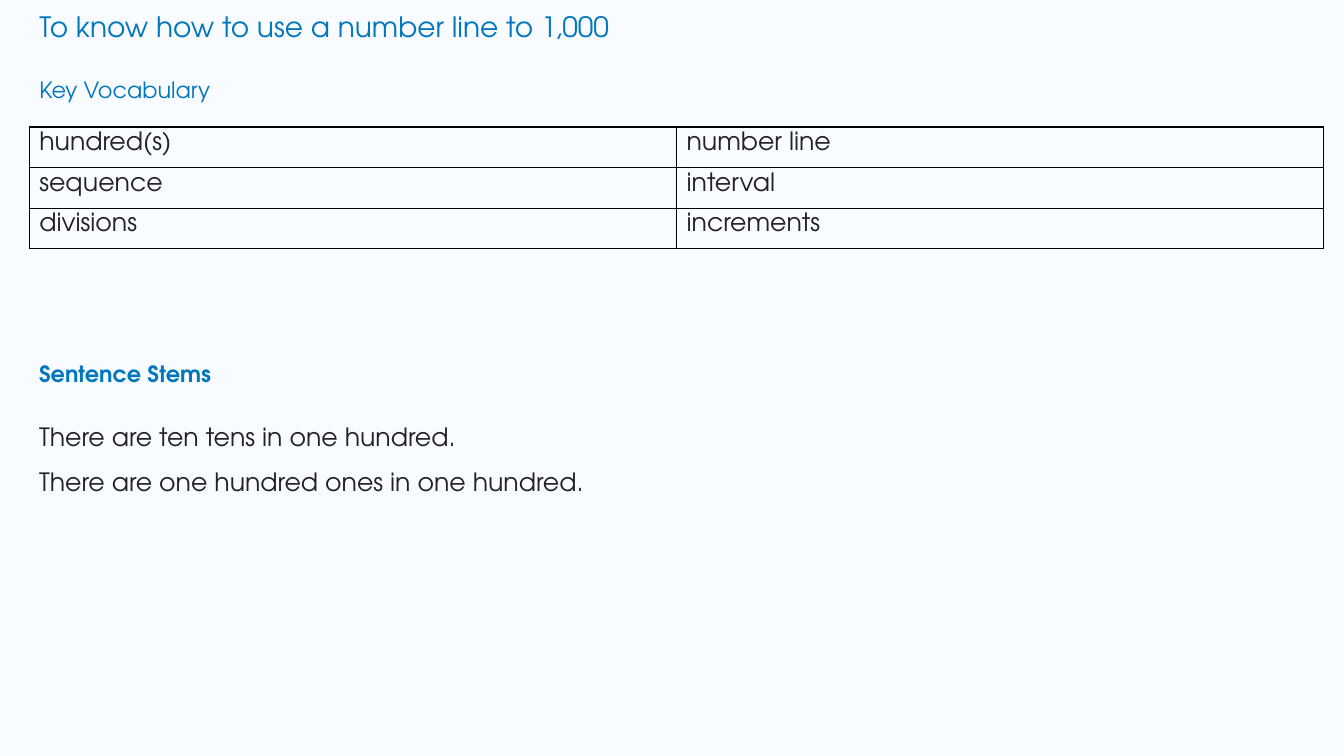
from lxml.etree import SubElement
from pptx import Presentation
from pptx.dml.color import RGBColor
from pptx.enum.text import MSO_ANCHOR as Anchor, MSO_AUTO_SIZE as Auto, PP_ALIGN as Align
from pptx.oxml.ns import qn
from pptx.util import Inches, Pt

BLUE = RGBColor(0x02, 0x77, 0xBD)
INK = RGBColor(0x22, 0x22, 0x22)
PALE = RGBColor(0xF8, 0xFB, 0xFF)
FACE = "TeX Gyre Adventor"
LEFT = Inches(0.29)
WIDE = Inches(12.84)


def style(par, size, color, bold=False):
    par.alignment = Align.LEFT
    par.space_before = Pt(0)
    font = par.font
    font.name, font.size, font.bold = FACE, Pt(size), bold
    font.color.rgb = color


def place(shape, top, width, height, lines, size, color, bold=False):
    shape.left, shape.top = LEFT, Inches(top)
    shape.width, shape.height = width, Inches(height)
    frame = shape.text_frame
    frame.word_wrap = True
    frame.auto_size = Auto.NONE
    frame.vertical_anchor = Anchor.TOP
    frame.text = "\n".join(lines)
    for par in frame.paragraphs:
        style(par, size, color, bold)
    return frame


deck = Presentation()
deck.slide_width, deck.slide_height = Inches(13.33), Inches(7.5)
slide = deck.slides.add_slide(deck.slide_layouts[1])
slide.background.fill.solid()
slide.background.fill.fore_color.rgb = PALE
shapes = slide.shapes

place(shapes.title, 0.04, Inches(12.34), 0.44,
      ["To know how to use a number line to 1,000"], 20, BLUE)

vocab = place(slide.placeholders[1], 0.71, Inches(2.97), 0.46,
              ["Key Vocabulary"], 16, BLUE)
props = vocab.paragraphs[0]._p.get_or_add_pPr()
props.set("marL", "0")
props.set("indent", "0")
SubElement(props, qn("a:buNone"))

stems = shapes.add_textbox(0, 0, 0, 0)
place(stems, 3.52, Inches(2.97), 0.46, ["Sentence Stems"], 16, BLUE, True)

lines = ["There are ten tens in one hundred.",
         "There are one hundred ones in one hundred."]
box = shapes.add_textbox(0, 0, 0, 0)
for par in place(box, 3.98, WIDE, 0.95, lines, 18, INK).paragraphs:
    par.line_spacing = 1.5

words = [("hundred(s)", "number line"),
         ("sequence", "interval"),
         ("divisions", "increments")]
table = shapes.add_table(3, 2, LEFT, Inches(1.26), WIDE, Inches(1.21)).table
table.first_row = table.horz_banding = False
for row, pair in zip(table.rows, words):
    for cell, word in zip(row.cells, pair):
        cell.text = word
        style(cell.text_frame.paragraphs[0], 18, INK)
        props = cell._tc.get_or_add_tcPr()
        for side in ("lnL", "lnR", "lnT", "lnB"):
            edge = SubElement(props, qn("a:" + side), w=str(Pt(1)))
            fill = SubElement(edge, qn("a:solidFill"))
            SubElement(fill, qn("a:srgbClr"), val="000000")
        cell.fill.background()

deck.save("out.pptx")
